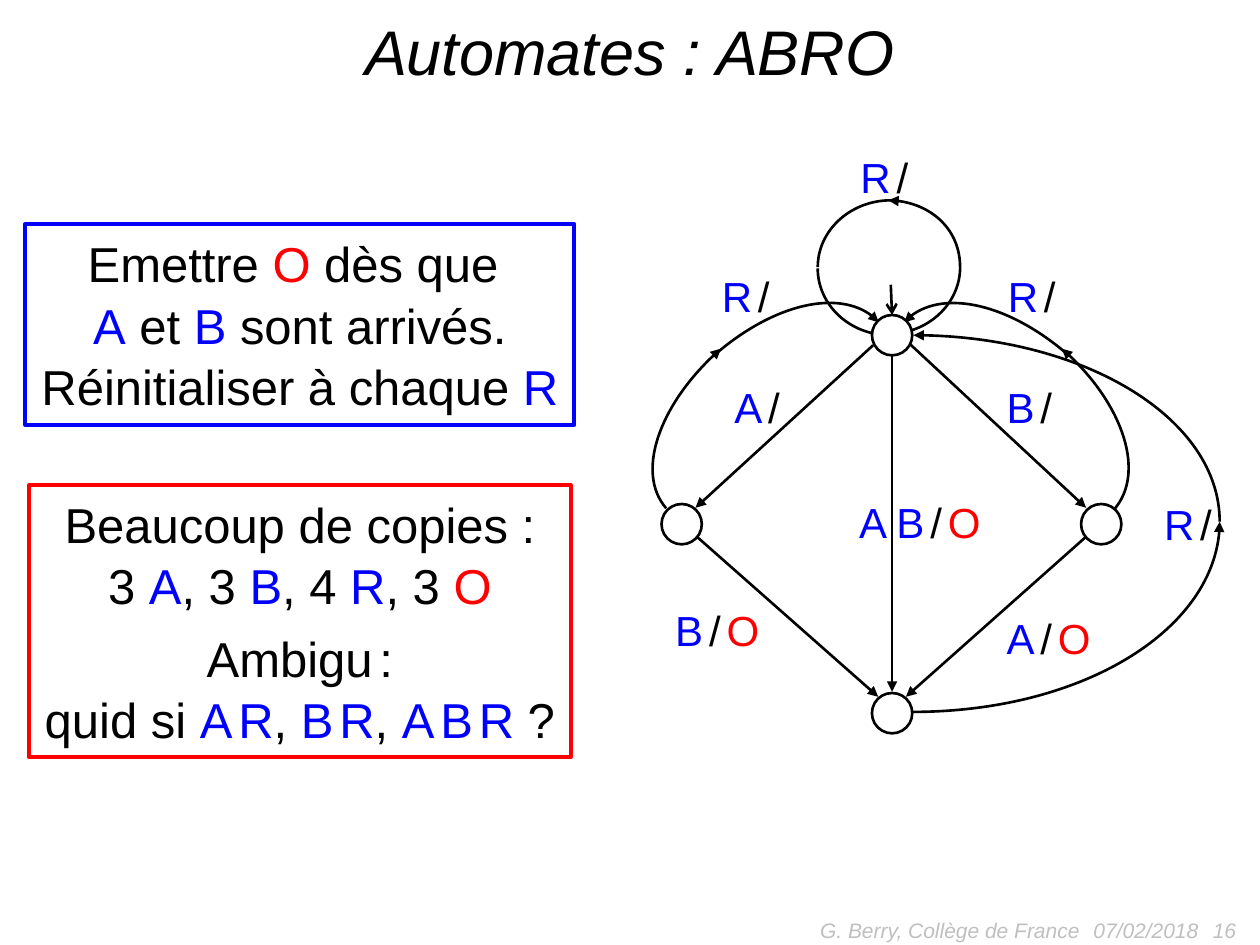
"""Build the slide on the ABRO automaton."""
from lxml.etree import SubElement
from pptx import Presentation
from pptx.dml.color import RGBColor
from pptx.enum.shapes import MSO_CONNECTOR as Link, MSO_SHAPE as Kind
from pptx.enum.text import MSO_ANCHOR as Anchor, MSO_AUTO_SIZE as Fit, PP_ALIGN as Align
from pptx.oxml.ns import qn
from pptx.util import Inches, Pt

BLACK = RGBColor(0, 0, 0)
WHITE = RGBColor(255, 255, 255)
BLUE = RGBColor(0, 0, 255)
RED = RGBColor(255, 0, 0)
GRAY = RGBColor(0xBF, 0xBF, 0xBF)

TITLE = "Automates : ABRO"
FOOT = [
    ("07/02/2018", (8.58, 7.18, 2.33, 0.4), Align.LEFT),
    (" 16", (7.58, 7.18, 2.33, 0.4), Align.RIGHT),
    ("G. Berry, Collège de France", (5.5, 7.18, 3.17, 0.4), Align.RIGHT),
]
BOXES = [
    (["Emettre |O| dès que ", "|A| et |B| sont arrivés.",
      "Réinitialiser à chaque |R|"], (0.2, 1.78, 4.36, 1.59), BLUE, ()),
    (["Beaucoup de copies :", "3 |A|, 3 |B|, 4 |R|, 3 |O|", "Ambigu~:",
      "quid si |A~R|, |B~R|, |A~B~R| ?"], (0.23, 3.85, 4.3, 2.16), RED, (2,)),
]
LABELS = [
    ("|A|~/", 5.73, 2.98, 0.56), ("|B|~/", 7.89, 2.98, 0.56),
    ("|A|~/~|O|", 7.89, 4.81, 0.87), ("|B|~/~|O|", 5.26, 4.75, 0.89),
    ("|A B|~/~|O|", 6.72, 3.89, 1.26), ("|R|~/", 6.73, 1.15, 0.58),
    ("|R|~/", 5.63, 2.1, 0.58), ("|R|~/", 7.9, 2.1, 0.58),
    ("|R|~/", 9.14, 3.91, 0.58),
]
OPEN = [(6.92, 5.5), (8.58, 4)]
SOLID = [(6.92, 2.5), (5.25, 4)]
SIZE = 0.32
EDGES = [
    ((6.93, 2.74), (5.52, 4.03), "triangle"),
    ((7.21, 2.72), (8.62, 4.03), "triangle"),
    ((8.62, 4.26), (7.19, 5.53), "triangle"),
    ((5.52, 4.25), (6.97, 5.53), "triangle"),
    ((7.08, 2.82), (7.08, 5.49), "triangle"),
    ((7.07, 2.26), (7.08, 2.5), "arrow"),
]
BENDS = {
    "down": ((0, 0), (0.55, 0), (1, 0.45), (1, 1)),
    "up": ((0, 1), (0, 0.45), (0.45, 0), (1, 0)),
    "back": ((1, 0), (1, 0.55), (0.55, 1), (0, 1)),
    "rise": ((1, 1), (0.45, 1), (0, 0.55), (0, 0)),
}
ARCS = [
    ("down", (7.05, 1.59, 0.57, 0.53), 0, "headEnd"),
    ("up", (6.49, 1.59, 0.58, 0.53), 0, None),
    ("up", (7.05, 2.12, 0.57, 0.53), 180, None),
    ("down", (6.49, 2.13, 0.57, 0.53), 180, None),
    ("down", (5.17, 2.82, 0.67, 1.16), 229, "tailEnd"),
    ("up", (5.99, 2.11, 0.66, 1.16), 49, "tailEnd"),
    ("up", (8.29, 2.83, 0.69, 1.15), 131, "headEnd"),
    ("down", (7.5, 2.11, 0.66, 1.16), 311, "headEnd"),
    ("back", (7.24, 4.14, 2.44, 1.51), 0, "headEnd"),
    ("rise", (7.25, 2.66, 2.43, 1.48), 180, "headEnd"),
]

deck = Presentation()
deck.slide_width, deck.slide_height = Inches(10), Inches(7.5)
shapes = deck.slides.add_slide(deck.slide_layouts[6]).shapes


def add_run(para, words, size, color, slant):
    run = para.add_run()
    run.text = words
    font = run.font
    font.name, font.size, font.italic = "Arial", Pt(size), slant
    font.color.rgb = color


def add_text(lines, at, size=24, color=BLACK, slant=False, align=Align.LEFT,
             wrap=False, edge=None, lead=None, gaps=(),
             anchor=Anchor.TOP, fit=Fit.SHAPE_TO_FIT_TEXT):
    spot = [Inches(v) for v in at]
    if edge is None:
        box = shapes.add_textbox(*spot)
    else:
        box = shapes.add_shape(Kind.RECTANGLE, *spot)
        box.shadow.inherit = False
        box.fill.background()
        box.line.color.rgb, box.line.width = edge, Pt(2.25)
    frame = box.text_frame
    frame.word_wrap, frame.vertical_anchor, frame.auto_size = wrap, anchor, fit
    for row, line in enumerate(lines):
        para = frame.add_paragraph() if row else frame.paragraphs[0]
        para.alignment, para.line_spacing = align, lead
        if row in gaps:
            para.space_before = Pt(6)
        thin = 14 if row in gaps else 12
        for num, part in enumerate(line.split("|")):
            hue = color if num % 2 == 0 else RED if part == "O" else BLUE
            for pos, bit in enumerate(part.split("~")):
                if pos:
                    add_run(para, " ", thin, hue, slant)
                if bit:
                    add_run(para, bit, size, hue, slant)


def ink(shape, end=None, tip="triangle"):
    shape.line.color.rgb, shape.line.width = BLACK, Pt(1.5)
    if end:
        SubElement(shape._element.spPr.find(qn("a:ln")), qn("a:" + end), type=tip)


def add_edge(start, end, tip):
    line = shapes.add_connector(Link.STRAIGHT, *map(Inches, start + end))
    ink(line, "tailEnd", tip)
    SubElement(line._element.spPr, qn("a:effectLst"))


def add_arc(bend, at, turn, end):
    left, top, width, height = at
    dots = [(Inches(left + x * width), Inches(top + y * height))
            for x, y in BENDS[bend]]
    pen = shapes.build_freeform(*dots[0])
    pen.add_line_segments(dots[1:], close=False)
    arc = pen.convert_to_shape()
    route = arc._element.spPr.find(".//" + qn("a:path"))
    cubic = SubElement(route, qn("a:cubicBezTo"))
    for leg in route.findall(qn("a:lnTo")):
        cubic.append(leg[0])
        route.remove(leg)
    arc.rotation = turn
    arc.shadow.inherit = False
    arc.fill.background()
    ink(arc, end)


def add_node(left, top, solid):
    node = shapes.add_shape(Kind.OVAL, *map(Inches, (left, top, SIZE, SIZE)))
    node.shadow.inherit = False
    if solid:
        node.fill.solid()
        node.fill.fore_color.rgb = WHITE
    else:
        node.fill.background()
    ink(node)


for words, at, align in FOOT:
    add_text([words], at, size=12, color=GRAY, slant=True, align=align,
             wrap=True, anchor=Anchor.MIDDLE, fit=Fit.NONE)
add_text([TITLE], (0.25, 0.05, 9.5, 0.71), size=36, slant=True,
         align=Align.CENTER, wrap=True)
for spot in OPEN:
    add_node(*spot, solid=False)
for edge in EDGES:
    add_edge(*edge)
for arc in ARCS:
    add_arc(*arc)
for words, left, top, width in LABELS:
    add_text([words], (left, top, width, 0.5))
for spot in SOLID:
    add_node(*spot, solid=True)
for lines, at, edge, gaps in BOXES:
    add_text(lines, at, size=28, align=Align.CENTER, edge=edge, lead=1.05, gaps=gaps)
deck.save("out.pptx")
